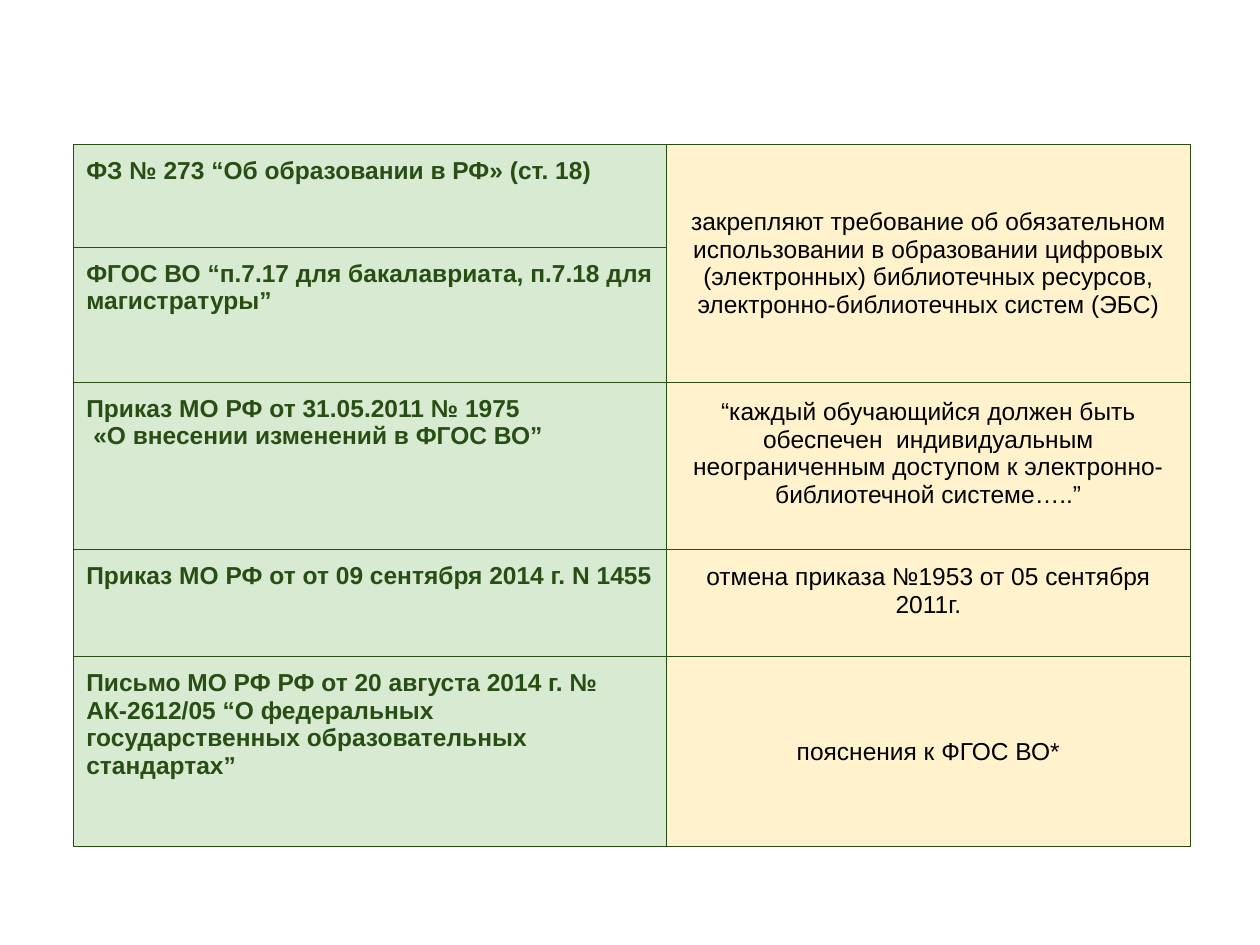
from dataclasses import dataclass

from lxml import etree
from pptx import Presentation
from pptx.dml.color import RGBColor
from pptx.enum.text import MSO_ANCHOR, PP_ALIGN
from pptx.oxml.ns import qn
from pptx.table import _Cell
from pptx.util import Cm, Pt

LEFT, CENTER = PP_ALIGN.LEFT, PP_ALIGN.CENTER
TOP, MIDDLE = MSO_ANCHOR.TOP, MSO_ANCHOR.MIDDLE
GREEN, MINT, CREAM, BLACK = "274E13", "D9EAD3", "FFF2CC", "000000"
WIDTHS = (11.94, 10.57)
PAD = 0.25


@dataclass
class Entry:
    height: float
    act: tuple[str, ...]
    note: str = ""
    foot: float = PAD


ENTRIES = (
    Entry(2.08, ("ФЗ № 273 “Об образовании в РФ» (ст. 18)",),
          "закрепляют требование об обязательном использовании в образовании "
          "цифровых (электронных) библиотечных ресурсов, "
          "электронно-библиотечных систем (ЭБС)"),
    Entry(2.72, ("ФГОС ВО “п.7.17 для бакалавриата, п.7.18 для магистратуры”",)),
    Entry(3.37, ("Приказ МО РФ от 31.05.2011 № 1975",
                 "«О внесении изменений в ФГОС ВО”"),
          "“каждый обучающийся должен быть обеспечен  индивидуальным "
          "неограниченным доступом к электронно-библиотечной системе…..”", 0.75),
    Entry(2.16, ("Приказ МО РФ от от 09 сентября 2014 г. N 1455",),
          "отмена приказа №1953 от 05 сентября 2011г.", 0.75),
    Entry(3.83, ("Письмо МО РФ РФ от 20 августа 2014 г. № АК-2612/05 "
                 "“О федеральных государственных образовательных стандартах”",),
          "пояснения к ФГОС ВО*"),
)


def color(code: str) -> RGBColor:
    return RGBColor.from_string(code)


def write(cell: _Cell, lines: tuple[str, ...], *, ink: str, bold: bool = False,
          align: PP_ALIGN = LEFT, anchor: MSO_ANCHOR = TOP,
          foot: float = PAD) -> None:
    cell.vertical_anchor = anchor
    cell.margin_left = cell.margin_right = cell.margin_top = Cm(PAD)
    cell.margin_bottom = Cm(foot)
    frame = cell.text_frame
    for i, line in enumerate(lines):
        par = frame.add_paragraph() if i else frame.paragraphs[0]
        if i:
            par._p.get_or_add_pPr().set("marL", str(Cm(0.14)))
        par.alignment = align
        run = par.add_run()
        run.text = line
        font = run.font
        font.name, font.size, font.bold = "Arial", Pt(14), bold
        font.color.rgb = color(ink)


def paint(cell: _Cell, fill: str) -> None:
    props = cell._tc.get_or_add_tcPr()
    for side in "LRTB":
        line = etree.SubElement(props, qn(f"a:ln{side}"), w=str(Pt(0.75)))
        solid = etree.SubElement(line, qn("a:solidFill"))
        etree.SubElement(solid, qn("a:srgbClr"), val=GREEN)
    cell.fill.solid()
    cell.fill.fore_color.rgb = color(fill)


def main() -> None:
    deck = Presentation()
    deck.slide_width, deck.slide_height = Cm(25.4), Cm(19.05)
    slide = deck.slides.add_slide(deck.slide_layouts[6])
    total = sum(entry.height for entry in ENTRIES)
    table = slide.shapes.add_table(
        len(ENTRIES), len(WIDTHS), Cm(1.49), Cm(2.91),
        Cm(sum(WIDTHS)), Cm(total)).table
    table.first_row = table.horz_banding = False
    for col, width in zip(table.columns, WIDTHS):
        col.width = Cm(width)
    for i, entry in enumerate(ENTRIES):
        table.rows[i].height = Cm(entry.height)
        act, note = table.cell(i, 0), table.cell(i, 1)
        paint(act, MINT)
        paint(note, CREAM)
        write(act, entry.act, ink=GREEN, bold=True)
        if entry.note:
            write(note, (entry.note,), ink=BLACK, align=CENTER,
                  anchor=MIDDLE, foot=entry.foot)
    table.cell(0, 1).merge(table.cell(1, 1))
    deck.save("out.pptx")


if __name__ == "__main__":
    main()
